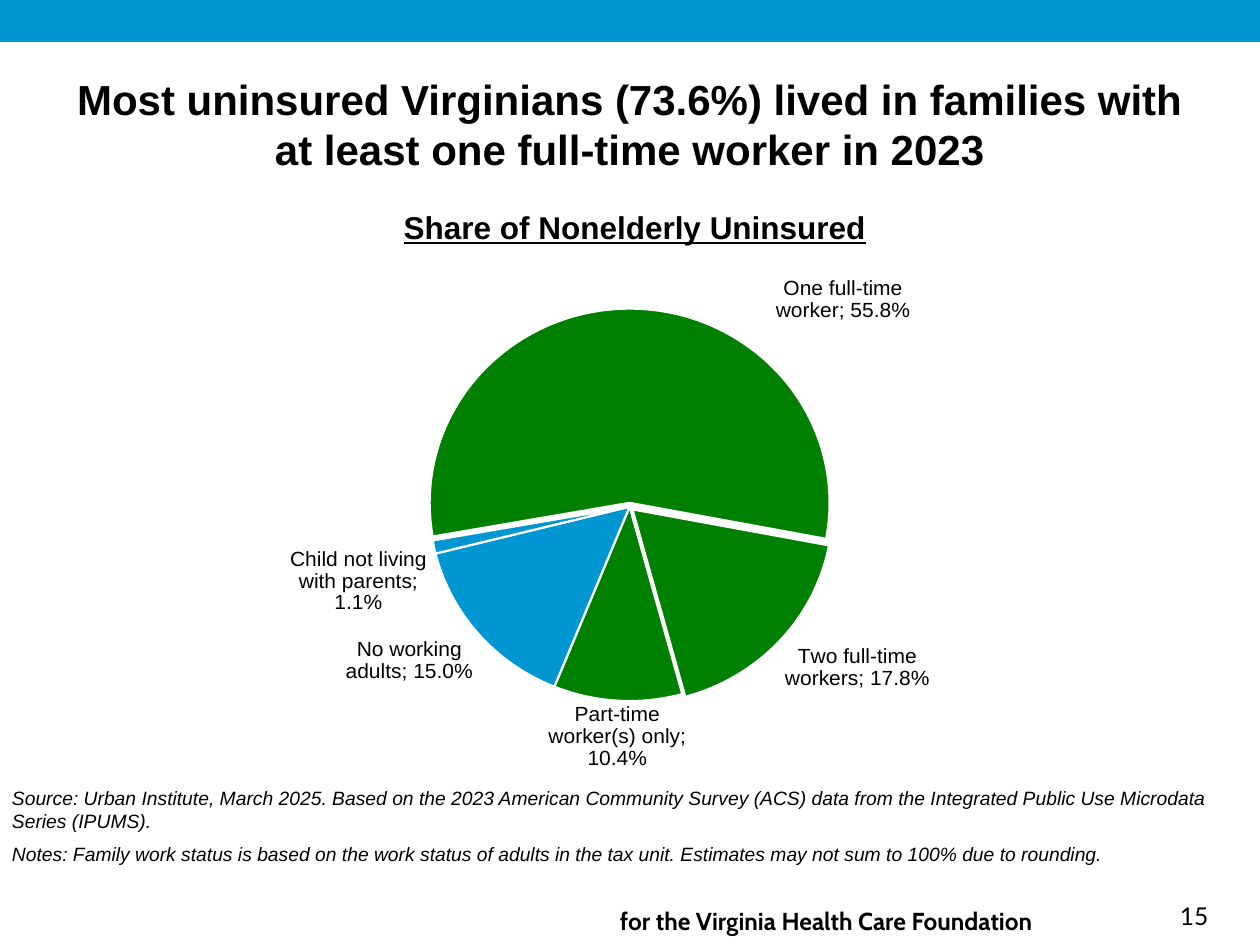
"""Build the slide on the work status of uninsured Virginians' families."""
from copy import deepcopy

from pptx import Presentation, util as u
from pptx.chart.data import CategoryChartData
from pptx.dml.color import RGBColor
from pptx.enum import chart as ch, shapes, text
from pptx.oxml import parse_xml
from pptx.oxml.ns import nsdecls, qn

PX = 914400 // 126
COLORS = {"blue": "0096D2", "green": "008000", "black": "000000", "white": "FFFFFF"}
CENTER = text.PP_ALIGN.CENTER

TEXTS = [
    {"box": (50, 67, 1160, 115), "align": CENTER,
     "font": {"name": "Arial", "size": u.Pt(24), "bold": True},
     "lines": ["Most uninsured Virginians (73.6%) lived in families with "
               "at least one full-time worker in 2023"]},
    {"box": (389, 202, 492, 50), "align": CENTER,
     "font": {"name": "Arial", "size": u.Pt(18), "bold": True, "underline": True},
     "lines": ["Share of Nonelderly Uninsured"]},
    {"box": (0, 780, 1260, 94),
     "font": {"name": "Arial", "size": u.Pt(11), "italic": True},
     "lines": ["Source: Urban Institute, March 2025. Based on the 2023 American Community "
               "Survey (ACS) data from the Integrated Public Use Microdata Series (IPUMS).",
               "Notes: Family work status is based on the work status of adults in the tax "
               "unit. Estimates may not sum to 100% due to rounding."]},
    {"box": (620, 900, 611, 33), "inset": 0,
     "font": {"name": "Cabin", "size": u.Pt(14), "bold": True},
     "lines": ["for the Virginia Health Care Foundation"]},
    {"box": (1168, 895, 92, 43),
     "font": {"name": "Lato", "size": u.Pt(14)},
     "lines": ["15"]},
]

CHART_BOX = (224, 258, 813, 515)
PIE_BOX = (430, 303, 400, 400)
FIRST_LABEL_SHIFT = (212, 20)
START_ANGLE = 260
SLICES = [
    ("One full-time worker", 0.558, "green", 2),
    ("Two full-time workers", 0.178, "green", 2),
    ("Part-time worker(s) only", 0.104, "green", 0),
    ("No working adults", 0.15, "blue", 0),
    ("Child not living with parents", 0.011, "blue", 0),
]


def emu(box):
    return [v * PX for v in box]


def rgb(name):
    return RGBColor.from_string(COLORS[name])


def style(font, values):
    for key, value in values.items():
        setattr(font, key, value)
    font.color.rgb = rgb("black")


def layout(**values):
    items = "".join(f'<c:{k} val="{v:.3f}"/>' if isinstance(v, float)
                    else f'<c:{k} val="{v}"/>' for k, v in values.items())
    return parse_xml(f'<c:layout {nsdecls("c")}><c:manualLayout>{items}'
                     "</c:manualLayout></c:layout>")


def add_text(s, box, font, lines, align=None, inset=12):
    tf = s.shapes.add_textbox(*emu(box)).text_frame
    tf.word_wrap = True
    tf.margin_left = inset * PX
    for i, line in enumerate(lines):
        p = tf.add_paragraph() if i else tf.paragraphs[0]
        p.alignment = align
        if i:
            p.space_before = u.Pt(5.5)
        r = p.add_run()
        r.text = line
        style(r.font, font)


def add_labels(series):
    labels = series.data_labels
    values = {"show_value": True, "show_category_name": True, "show_percentage": False,
              "number_format": "0.0%", "number_format_is_linked": False,
              "position": ch.XL_LABEL_POSITION.OUTSIDE_END}
    for key, value in values.items():
        setattr(labels, key, value)
    style(labels.font, {"name": "Arial", "size": u.Pt(12), "bold": False})

    node = series._element.find(qn("c:dLbls"))
    for leader in node.findall(qn("c:showLeaderLines")):
        node.remove(leader)
    node.append(parse_xml(f'<c:separator {nsdecls("c")}>; </c:separator>'))
    first = parse_xml(f'<c:dLbl {nsdecls("c")}><c:idx val="0"/></c:dLbl>')
    dx, dy = FIRST_LABEL_SHIFT
    first.append(layout(x=dx / CHART_BOX[2], y=dy / CHART_BOX[3]))
    for child in node:
        first.append(deepcopy(child))
    node.insert(0, first)
    node.append(parse_xml(f'<c:showLeaderLines {nsdecls("c")} val="0"/>'))


def add_pie(s):
    data = CategoryChartData(number_format="0.0%")
    data.categories = [name for name, *_ in SLICES]
    data.add_series("Series 1", [value for _, value, *_ in SLICES])
    chart = s.shapes.add_chart(ch.XL_CHART_TYPE.PIE, *emu(CHART_BOX), data).chart
    chart.has_legend = chart.has_title = False
    style(chart.font, {"name": "Arial", "size": u.Pt(12)})
    plot = chart.plots[0]
    plot.vary_by_categories = False
    series = plot.series[0]
    for i, (_, _, color, explosion) in enumerate(SLICES):
        point = series.points[i]
        point.format.fill.solid()
        point.format.fill.fore_color.rgb = rgb(color)
        point.format.line.color.rgb = rgb("white")
        point.format.line.width = u.Pt(1.25)
        if explosion:
            sp_pr = point.format._element if hasattr(point.format, "_element") else None
            d_pt = series._element.findall(qn("c:dPt"))[i]
            sp_pr = d_pt.find(qn("c:spPr"))
            sp_pr.addprevious(parse_xml(f'<c:explosion {nsdecls("c")} val="{explosion}"/>'))
    add_labels(series)

    pie = plot._element
    for old in pie.findall(qn("c:firstSliceAng")):
        pie.remove(old)
    pie.append(parse_xml(f'<c:firstSliceAng {nsdecls("c")} val="{START_ANGLE}"/>'))
    area = pie.getparent()
    for old in area.findall(qn("c:layout")):
        area.remove(old)
    left, top, width, height = CHART_BOX
    x, y, w, h = PIE_BOX
    area.insert(0, layout(layoutTarget="inner", xMode="edge", yMode="edge",
                          x=(x - left) / width, y=(y - top) / height,
                          w=w / width, h=h / height))


def main():
    prs = Presentation()
    prs.slide_width, prs.slide_height = emu((1260, 945))
    s = prs.slides.add_slide(prs.slide_layouts[6])
    band = s.shapes.add_shape(shapes.MSO_SHAPE.RECTANGLE, *emu((0, 0, 1260, 42)))
    band.shadow.inherit = False
    band.fill.solid()
    band.fill.fore_color.rgb = rgb("blue")
    band.line.fill.background()
    add_pie(s)
    for item in TEXTS:
        add_text(s, **item)
    prs.save("out.pptx")


if __name__ == "__main__":
    main()
